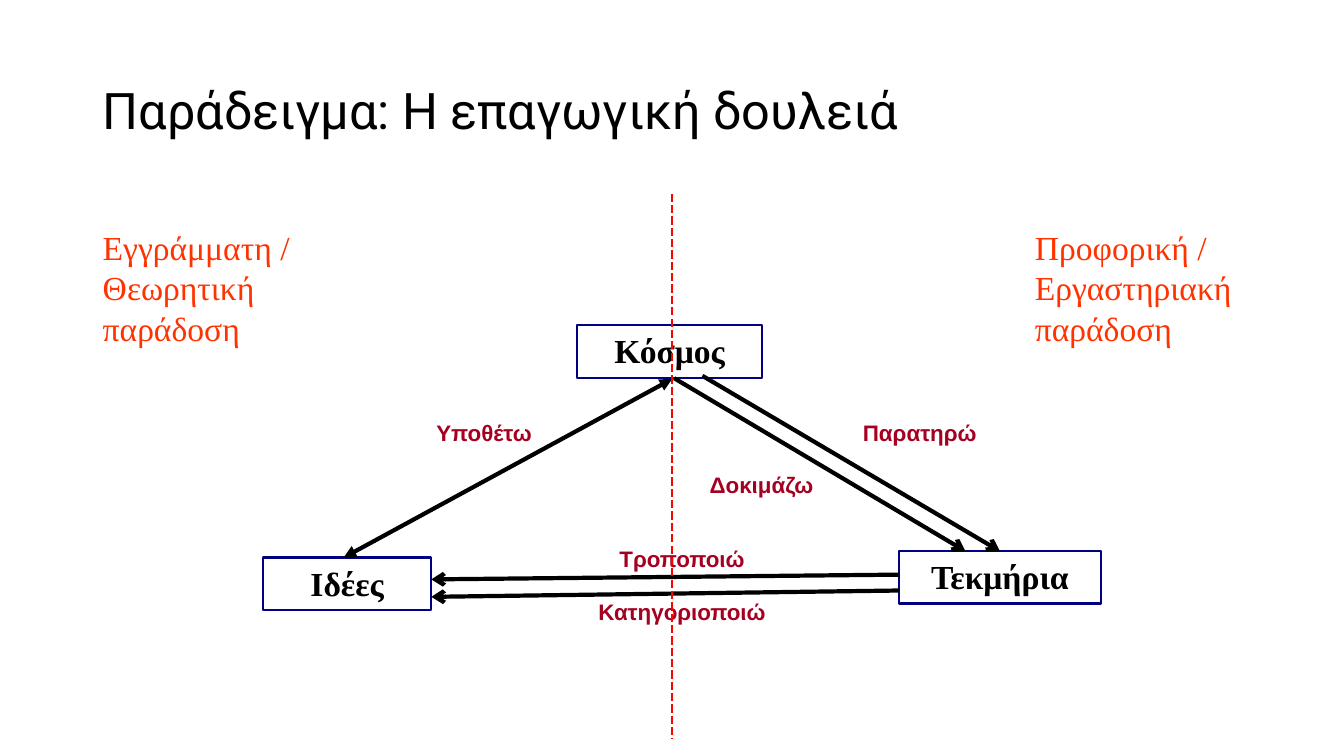
from lxml import etree
from pptx import Presentation
from pptx.dml.color import RGBColor
from pptx.enum import dml, shapes, text
from pptx.oxml import ns
from pptx.util import Cm, Pt

INK = {"black": "000000", "navy": "000080", "red": "FF0000",
       "orange": "FF3300", "wine": "A50021"}
SERIF = "Times New Roman"


def tint(name):
    return RGBColor.from_string(INK[name])


def write(shape, words, font=SERIF, size=24, color="black", bold=False,
          align=text.PP_ALIGN.LEFT, anchor=text.MSO_ANCHOR.TOP, gap=1.0):
    frame = shape.text_frame
    frame.word_wrap = True
    frame.vertical_anchor = anchor
    para = frame.paragraphs[0]
    para.alignment = align
    para.line_spacing = gap
    run = para.add_run()
    run.text = words
    run.font.name = font
    run.font.size = Pt(size)
    run.font.bold = bold
    run.font.color.rgb = tint(color)


def label(slide, box, words, **style):
    write(slide.shapes.add_textbox(*map(Cm, box)), words, **style)


def node(slide, box, words):
    rect = slide.shapes.add_shape(shapes.MSO_SHAPE.RECTANGLE, *map(Cm, box))
    rect.shadow.inherit = False
    rect.fill.background()
    rect.line.color.rgb = tint("navy")
    rect.line.width = Pt(1.5)
    write(rect, words, bold=True, align=text.PP_ALIGN.CENTER)


def line(slide, start, end, color="black", width=3, dash=None, head=None, tail=None):
    """Draw a straight line; head sits at its start and tail at its end."""
    link = slide.shapes.add_connector(
        shapes.MSO_CONNECTOR.STRAIGHT, *map(Cm, (*start, *end)))
    link.line.color.rgb = tint(color)
    link.line.width = Pt(width)
    if dash:
        link.line.dash_style = dash
    props = link._element.spPr
    for tag, kind in (("a:headEnd", head), ("a:tailEnd", tail)):
        if kind:
            etree.SubElement(props.find(ns.qn("a:ln")), ns.qn(tag), type=kind)
    etree.SubElement(props, ns.qn("a:effectLst"))


def title(slide, box):
    label(slide, box, "Παράδειγμα: Η επαγωγική δουλειά", font="Roboto",
          size=36, anchor=text.MSO_ANCHOR.MIDDLE, gap=0.9)


def sides(slide, box):
    """Name the two traditions at the left and right edges of the box."""
    left, top, wide, high = box
    first, last = 5.51, 5.72
    label(slide, (left, top, first, high),
          "Εγγράμματη / Θεωρητική παράδοση", color="orange")
    label(slide, (left + wide - last, top, last, high),
          "Προφορική / Εργαστηριακή παράδοση", color="orange")


def cycle(slide, box):
    """Draw the triangle of world, ideas and evidence."""
    left, top, wide, high = box
    tall = 1.32
    world, ideas, proof = 4.65, 4.24, 5.08
    floor = high - tall
    rise = floor - 0.16
    edge = wide - proof

    def at(x, y):
        return left + x, top + y

    for x, y, w, words in ((7.92, 0, world, "Κόσμος"),
                           (0, floor, ideas, "Ιδέες"),
                           (edge, rise, proof, "Τεκμήρια")):
        node(slide, (*at(x, y), w, tall), words)

    line(slide, at(2.03, floor), at(10.31, 1.35), head="triangle", tail="triangle")
    for start, end in (((11.07, 1.27), (18.57, rise)),
                       ((10.36, 1.33), (17.7, rise)),
                       ((edge, 6.28), (ideas, 6.4)),
                       ((edge, 6.68), (ideas, 6.84))):
        line(slide, at(*start), at(*end), tail="arrow")

    for x, y, w, words in ((14.53, 2.24, 4.04, "Παρατηρώ"),
                           (3.68, 2.24, 3.78, "Υποθέτω"),
                           (10.82, 3.56, 3.48, "Δοκιμάζω"),
                           (7.92, 5.41, 5.28, "Τροποποιώ"),
                           (7.92, 6.76, 5.28, "Κατηγοριοποιώ")):
        label(slide, (*at(x, y), w, 0.94), words, font="Arial", size=16,
              color="wine", bold=True, align=text.PP_ALIGN.CENTER)


def split(slide, box):
    """Divide the box by a dashed line down its middle."""
    left, top, wide, high = box
    mid = left + wide / 2
    line(slide, (mid, top), (mid, top + high), color="red", width=0.75,
         dash=dml.MSO_LINE.LONG_DASH)


def main():
    deck = Presentation()
    deck.slide_width, deck.slide_height = Cm(33.87), Cm(19.05)
    slide = deck.slides.add_slide(deck.slide_layouts[6])
    title(slide, (2.34, 1.02, 29.21, 3.68))
    sides(slide, (2.34, 5.59, 29.21, 3.33))
    cycle(slide, (6.63, 8.2, 21.11, 7.17))
    split(slide, (0, 4.88, 33.87, 13.74))
    deck.save("out.pptx")


if __name__ == "__main__":
    main()
